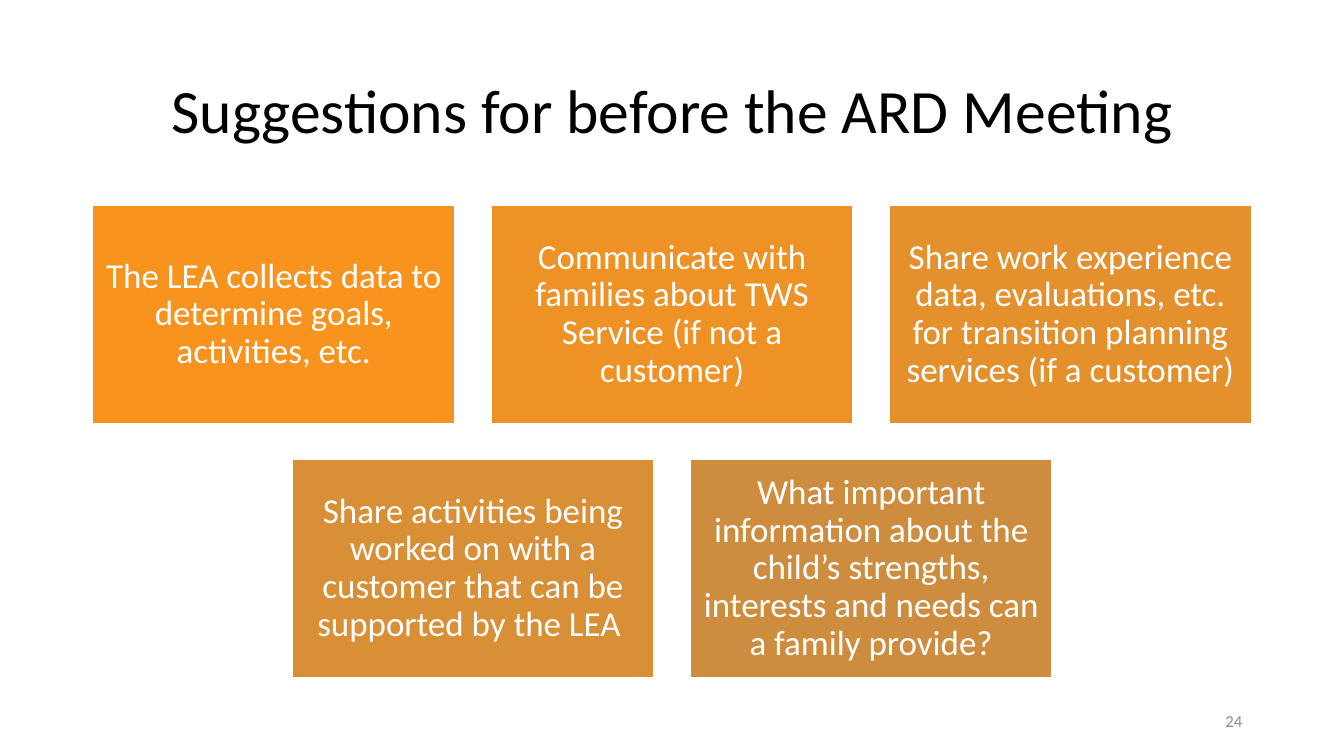
import pptx
import pptx.dml.color
import pptx.enum.shapes
import pptx.enum.text
import pptx.util

Inches = pptx.util.Inches
Pt = pptx.util.Pt
RGBColor = pptx.dml.color.RGBColor
PP_ALIGN = pptx.enum.text.PP_ALIGN
MIDDLE = pptx.enum.text.MSO_ANCHOR.MIDDLE

BLACK = RGBColor(0x00, 0x00, 0x00)
WHITE = RGBColor(0xFF, 0xFF, 0xFF)
GRAY = RGBColor(0x8C, 0x8C, 0x8C)
ORANGES = [
    RGBColor(0xF8, 0x93, 0x1D),
    RGBColor(0xEE, 0x92, 0x25),
    RGBColor(0xE3, 0x90, 0x2D),
    RGBColor(0xD9, 0x8F, 0x35),
    RGBColor(0xCE, 0x8D, 0x3E),
]

TITLE = "Suggestions for before the ARD Meeting"
PAGE_NUMBER = "24"
SUGGESTION_ROWS = [
    [
        "The LEA collects data to determine goals, activities, etc.",
        "Communicate with families about TWS Service (if not a customer)",
        "Share work experience data, evaluations, etc. for transition planning services (if a customer)",
    ],
    [
        "Share activities being worked on with a customer that can be supported by the LEA ",
        "What important information about the child’s strengths, interests and needs can a family provide?",
    ],
]

SLIDE_WIDTH = 13.33
CARD_WIDTH, CARD_HEIGHT, GAP = 3.59, 2.16, 0.36
CARDS_TOP = 2.04


def write_text(shape, text, size, color, alignment, line_spacing=1.0):
    frame = shape.text_frame
    frame.word_wrap = True
    frame.vertical_anchor = MIDDLE
    frame.text = text
    paragraph = frame.paragraphs[0]
    paragraph.alignment = alignment
    paragraph.line_spacing = line_spacing
    paragraph.font.name = "Calibri"
    paragraph.font.size = Pt(size)
    paragraph.font.color.rgb = color


def add_card(slide, left, top, text, fill):
    card = slide.shapes.add_shape(
        pptx.enum.shapes.MSO_SHAPE.RECTANGLE,
        Inches(left), Inches(top), Inches(CARD_WIDTH), Inches(CARD_HEIGHT),
    )
    card.shadow.inherit = False
    card.fill.solid()
    card.fill.fore_color.rgb = fill
    card.line.color.rgb = WHITE
    card.line.width = Pt(1)
    frame = card.text_frame
    frame.margin_left = frame.margin_right = Inches(0.1)
    frame.margin_top = frame.margin_bottom = Inches(0.1)
    write_text(card, text, 25, WHITE, PP_ALIGN.CENTER, 0.9)


def main():
    presentation = pptx.Presentation()
    presentation.slide_width = Inches(SLIDE_WIDTH)
    presentation.slide_height = Inches(7.5)
    slide = presentation.slides.add_slide(presentation.slide_layouts[5])

    title = slide.shapes.title
    title.left, title.top = Inches(0.92), Inches(0.4)
    title.width, title.height = Inches(11.5), Inches(1.45)
    write_text(title, TITLE, 44, BLACK, PP_ALIGN.CENTER, 0.9)

    colors = iter(ORANGES)
    for row, suggestions in enumerate(SUGGESTION_ROWS):
        count = len(suggestions)
        row_width = count * CARD_WIDTH + (count - 1) * GAP
        row_left = (SLIDE_WIDTH - row_width) / 2
        top = CARDS_TOP + row * (CARD_HEIGHT + GAP)
        for column, text in enumerate(suggestions):
            left = row_left + column * (CARD_WIDTH + GAP)
            add_card(slide, left, top, text, next(colors))

    page_number = slide.shapes.add_textbox(
        Inches(9.42), Inches(6.95), Inches(3), Inches(0.4)
    )
    write_text(page_number, PAGE_NUMBER, 12, GRAY, PP_ALIGN.RIGHT)
    page_number.text_frame.paragraphs[0].space_after = Pt(6)

    presentation.save("out.pptx")


if __name__ == "__main__":
    main()
